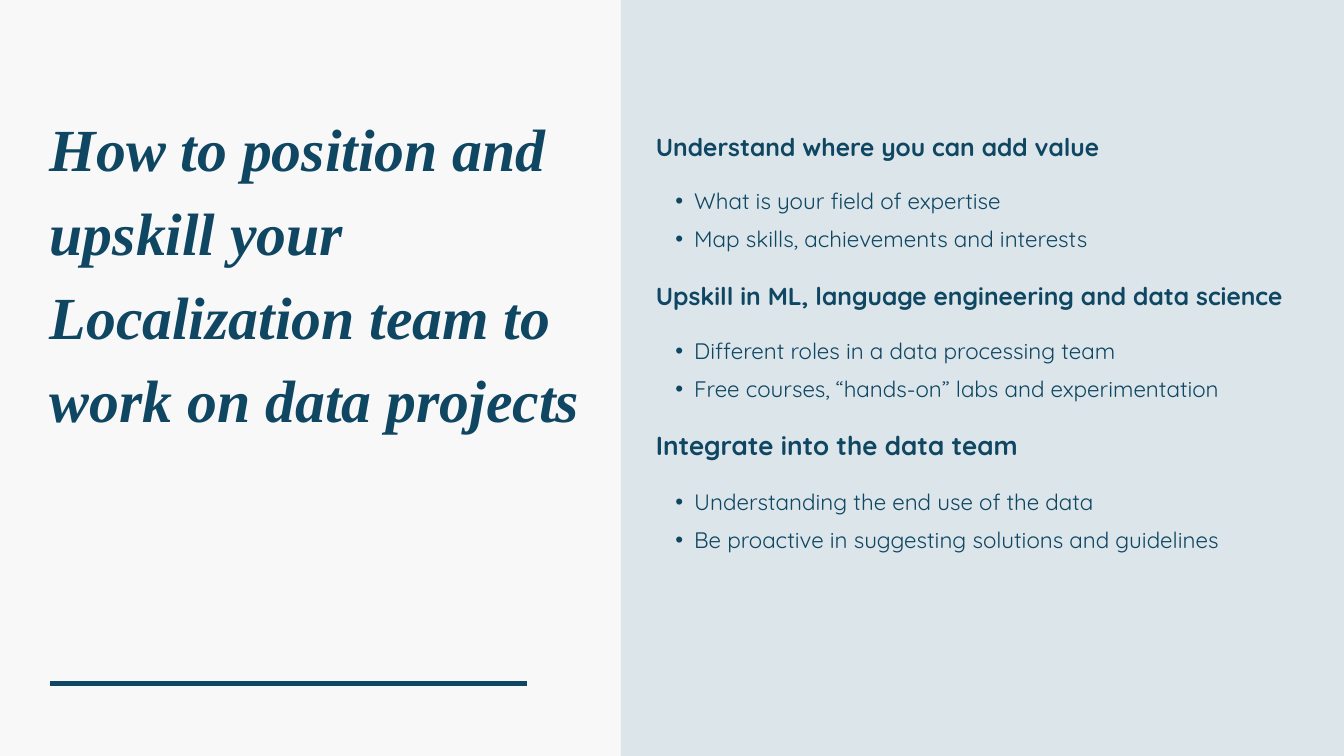
from dataclasses import dataclass

from lxml import etree
from pptx import Presentation
from pptx.dml.color import RGBColor
from pptx.enum.shapes import MSO_CONNECTOR, MSO_SHAPE
from pptx.enum.text import MSO_ANCHOR, MSO_AUTO_SIZE, PP_ALIGN
from pptx.oxml.ns import qn
from pptx.util import Inches, Pt


@dataclass(frozen=True)
class Theme:
    ink: RGBColor = RGBColor.from_string("0F4662")
    panel: RGBColor = RGBColor.from_string("DBE5EA")
    paper: RGBColor = RGBColor.from_string("F8F8F8")
    title_font: str = "Times New Roman"
    body_font: str = "Quicksand"
    title_size: float = 64
    bullet_size: float = 24
    title_leading: float = 1.4
    body_leading: float = 1.7


theme = Theme()


def set_text(sp, lines, font, size, leading, bold=False, italic=False):
    tf = sp.text_frame
    tf.word_wrap = True
    tf.auto_size = MSO_AUTO_SIZE.NONE
    tf.vertical_anchor = MSO_ANCHOR.TOP
    tf.margin_left = tf.margin_top = tf.margin_right = tf.margin_bottom = 0
    tf.text = "\n".join(lines)
    for p in tf.paragraphs:
        p.alignment = PP_ALIGN.LEFT
        p.line_spacing = Pt(round(size * leading, 1))
        for r in p.runs:
            r.font.name = font
            r.font.size = Pt(size)
            r.font.bold = bold
            r.font.italic = italic
            r.font.color.rgb = theme.ink


def add_bullets(sp):
    for p in sp.text_frame.paragraphs:
        p.level = 1
        pPr = p._p.get_or_add_pPr()
        pPr.set("marL", str(Inches(0.57)))
        pPr.set("indent", str(Inches(-0.28)))
        etree.SubElement(pPr, qn("a:buFont"), typeface="Arial")
        etree.SubElement(pPr, qn("a:buChar"), char="•")


prs = Presentation()
prs.slide_width, prs.slide_height = Inches(20), Inches(11.25)
s = prs.slides.add_slide(prs.slide_layouts[5])
s.background.fill.solid()
s.background.fill.fore_color.rgb = theme.paper

panel = s.shapes.add_shape(MSO_SHAPE.RECTANGLE, Inches(9.24), 0, Inches(10.76), prs.slide_height)
panel.shadow.inherit = False
panel.fill.solid()
panel.fill.fore_color.rgb = theme.panel
panel.line.fill.background()

title = s.shapes.title
title.left, title.top, title.width, title.height = (Inches(v) for v in (0.74, 1.49, 7.99, 4.91))
set_text(title, ["How to position and upskill your Localization team to work on data projects"],
         theme.title_font, theme.title_size, theme.title_leading, bold=True, italic=True)

sections = [
    ("Understand where you can add value", 1.78, 26.4, 2.62,
     ["What is your field of expertise", "Map skills, achievements and interests"]),
    ("Upskill in ML, language engineering and data science", 4, 26.4, 4.85,
     ["Different roles in a data processing team",
      "Free courses, “hands-on” labs and experimentation"]),
    ("Integrate into the data team", 6.2, 28, 7.1,
     ["Understanding the end use of the data",
      "Be proactive in suggesting solutions and guidelines"]),
]
for heading, heading_top, heading_size, list_top, points in sections:
    sp = s.shapes.add_textbox(Inches(9.76), Inches(heading_top), Inches(9.41), Inches(0.6))
    set_text(sp, [heading], theme.body_font, heading_size, theme.body_leading, bold=True)
    sp = s.shapes.add_textbox(Inches(9.76), Inches(list_top), Inches(9.41), Inches(1.09))
    set_text(sp, points, theme.body_font, theme.bullet_size, theme.body_leading)
    add_bullets(sp)

rule = s.shapes.add_connector(MSO_CONNECTOR.STRAIGHT, Inches(0.74), Inches(10.17), Inches(7.84), Inches(10.17))
rule.line.color.rgb = theme.ink
rule.line.width = Pt(6)
etree.SubElement(rule._element.spPr, qn("a:effectLst"))

prs.save("out.pptx")
